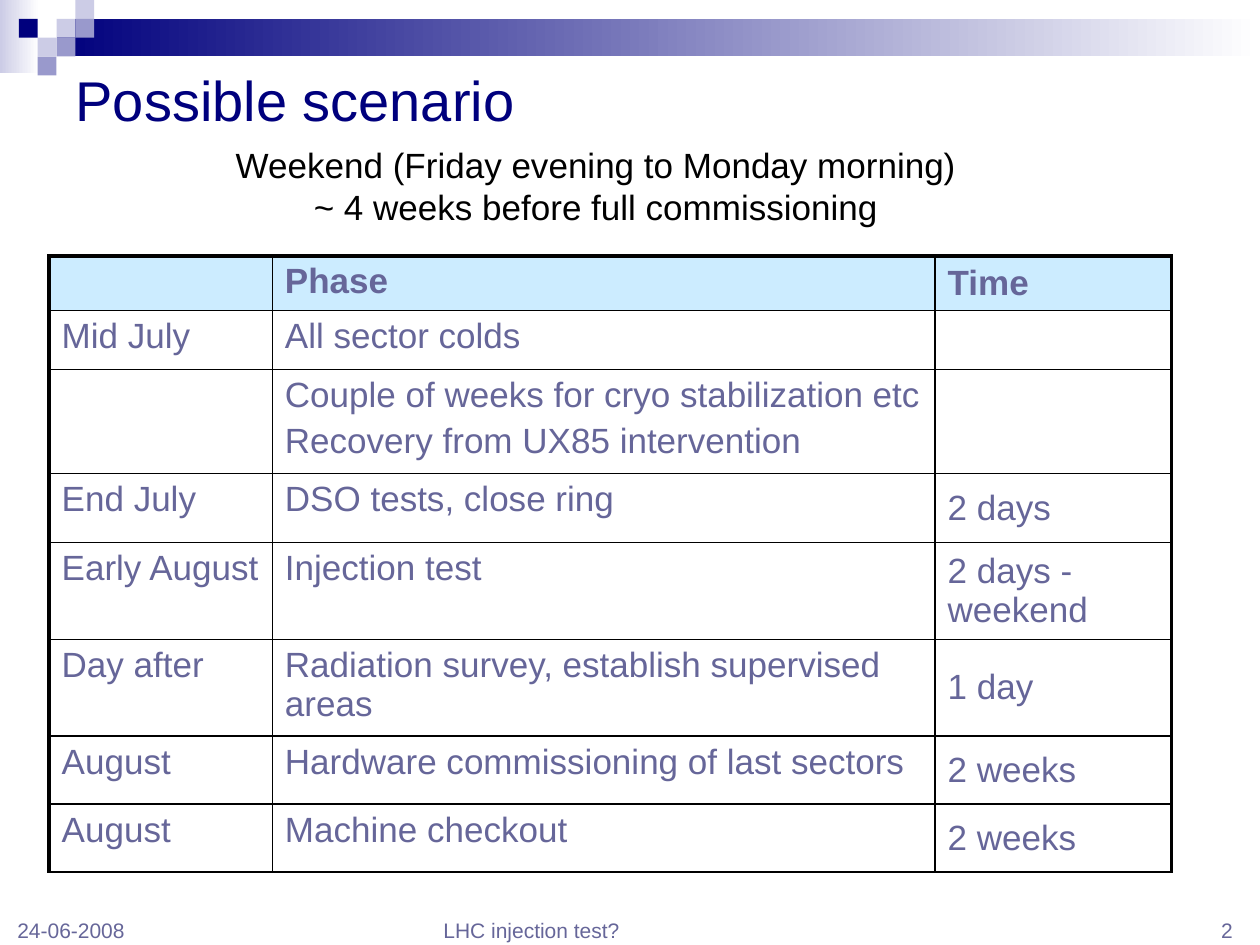
from pptx import Presentation
from pptx.dml.color import RGBColor
from pptx.enum import shapes, text
from pptx.oxml import parse_xml
from pptx.oxml.ns import nsdecls
from pptx.util import Cm, Pt

NAVY = RGBColor(0x00, 0x00, 0x7D)
LILAC = RGBColor(0xCC, 0xCC, 0xE6)
VIOLET = RGBColor(0x99, 0x99, 0xCC)
SLATE = RGBColor(0x66, 0x66, 0x99)
SKY = RGBColor(0xCC, 0xEC, 0xFF)
WHITE = RGBColor(0xFF, 0xFF, 0xFF)
BLACK = RGBColor(0, 0, 0)

# Content
TITLE = "Possible scenario"
SUMMARY = ["Weekend (Friday evening to Monday morning)",
           "~ 4 weeks before full commissioning"]
SCHEDULE = [
    ("", "Phase", "Time"),
    ("Mid July", "All sector colds", ""),
    ("", "Couple of weeks for cryo stabilization etc\n"
         "Recovery from UX85 intervention", ""),
    ("End July", "DSO tests, close ring", "2 days"),
    ("Early August", "Injection test", "2 days - weekend"),
    ("Day after", "Radiation survey, establish supervised areas", "1 day"),
    ("August", "Hardware commissioning of last sectors", "2 weeks"),
    ("August", "Machine checkout", "2 weeks"),
]
FOOTERS = [  # wording, left, width, alignment
    ("LHC injection test?", 8.69, 8.05, text.PP_ALIGN.LEFT),
    ("2", 19.18, 5.92, text.PP_ALIGN.RIGHT),
    ("24-06-2008", 0.1, 5.92, text.PP_ALIGN.LEFT),
]

# Layout in centimetres
COLUMN_WIDTHS = [4.5, 13.36, 4.77]
ROW_HEIGHTS = [0.99, 1.19, 1.4, 1.4, 1.37, 1.37, 1.37, 1.37]
TILE = 0.38
BANDS = [  # left, top, width, height, first colour of the fade to white
    (0, 0, 0.79, 1.47, LILAC),
    (3 * TILE, TILE, 25.4 - 3 * TILE, 2 * TILE, NAVY),
]
TILES = [  # column, row, colour
    (3, 1, LILAC), (4, 0, LILAC), (4, 1, VIOLET), (2, 2, LILAC),
    (1, 1, NAVY), (3, 2, VIOLET), (2, 3, VIOLET),
]


def write(frame, lines, size, color, align=text.PP_ALIGN.LEFT, bold=False, before=0):
    frame.word_wrap = True
    for i, line in enumerate(lines):
        paragraph = frame.paragraphs[0] if i == 0 else frame.add_paragraph()
        paragraph.alignment = align
        paragraph.space_before = Pt(before)
        fonts = [paragraph.font]
        if line:
            run = paragraph.add_run()
            run.text = line
            fonts.append(run.font)
        for font in fonts:
            font.name, font.size, font.bold = "Arial", Pt(size), bold
            font.color.rgb = color


def add_block(slide, left, top, width, height):
    block = slide.shapes.add_shape(shapes.MSO_SHAPE.RECTANGLE,
                                   Cm(left), Cm(top), Cm(width), Cm(height))
    block.shadow.inherit = False
    block.line.fill.background()
    return block


def add_banner(slide):
    for *box, color in BANDS:
        fill = add_block(slide, *box).fill
        fill.gradient()
        fill.gradient_angle = 0
        for stop, shade in zip(fill.gradient_stops, (color, WHITE)):
            stop.color.rgb = shade
    for column, row, color in TILES:
        fill = add_block(slide, column * TILE, row * TILE, TILE, TILE).fill
        fill.solid()
        fill.fore_color.rgb = color


def add_borders(cell, widths):
    properties = cell._tc.get_or_add_tcPr()
    for side, width in zip("LRTB", widths):
        properties.append(parse_xml(
            f'<a:ln{side} {nsdecls("a")} w="{Pt(width)}"><a:solidFill>'
            f'<a:srgbClr val="{BLACK}"/></a:solidFill></a:ln{side}>'))


def add_schedule(slide):
    frame = slide.shapes.add_table(len(SCHEDULE), len(COLUMN_WIDTHS), Cm(0.99), Cm(5.16),
                                   Cm(sum(COLUMN_WIDTHS)), Cm(sum(ROW_HEIGHTS)))
    schedule = frame.table
    for column, width in zip(schedule.columns, COLUMN_WIDTHS):
        column.width = Cm(width)
    for row, height in zip(schedule.rows, ROW_HEIGHTS):
        row.height = Cm(height)
    last = len(COLUMN_WIDTHS) - 1
    for r, entries in enumerate(SCHEDULE):
        for c, entry in enumerate(entries):
            cell = schedule.cell(r, c)
            write(cell.text_frame, entry.split("\n"), 20, SLATE, bold=r == 0, before=4)
            cell.vertical_anchor = text.MSO_ANCHOR.MIDDLE if c == last else text.MSO_ANCHOR.TOP
            # Heavy outer frame on the left, right and top
            add_borders(cell, [2.25 if outer else 1
                               for outer in (c == 0, c == last, r == 0, False)])
            if r == 0:
                cell.fill.solid()
                cell.fill.fore_color.rgb = SKY
            else:
                cell.fill.background()


def main():
    deck = Presentation()
    deck.slide_width, deck.slide_height = Cm(25.4), Cm(19.05)
    slide = deck.slides.add_slide(deck.slide_layouts[5])
    add_banner(slide)

    # Footer line
    for wording, left, width, align in FOOTERS:
        footer = slide.shapes.add_textbox(Cm(left), Cm(18.4), Cm(width), Cm(0.72))
        footer.text_frame.vertical_anchor = text.MSO_ANCHOR.BOTTOM
        write(footer.text_frame, [wording], 12, SLATE, align)

    # Title
    title = slide.shapes.title
    title.left, title.top, title.width, title.height = Cm(1.27), Cm(1.27), Cm(22.86), Cm(1.45)
    title.text_frame.auto_size = text.MSO_AUTO_SIZE.NONE
    title.text_frame.vertical_anchor = text.MSO_ANCHOR.MIDDLE
    write(title.text_frame, [TITLE], 32, NAVY)

    add_schedule(slide)

    # Summary above the schedule
    summary = slide.shapes.add_textbox(Cm(3.38), Cm(2.77), Cm(17.27), Cm(1.96))
    summary.text_frame.auto_size = text.MSO_AUTO_SIZE.SHAPE_TO_FIT_TEXT
    write(summary.text_frame, SUMMARY, 20, BLACK, text.PP_ALIGN.CENTER)

    deck.save("out.pptx")


if __name__ == "__main__":
    main()
